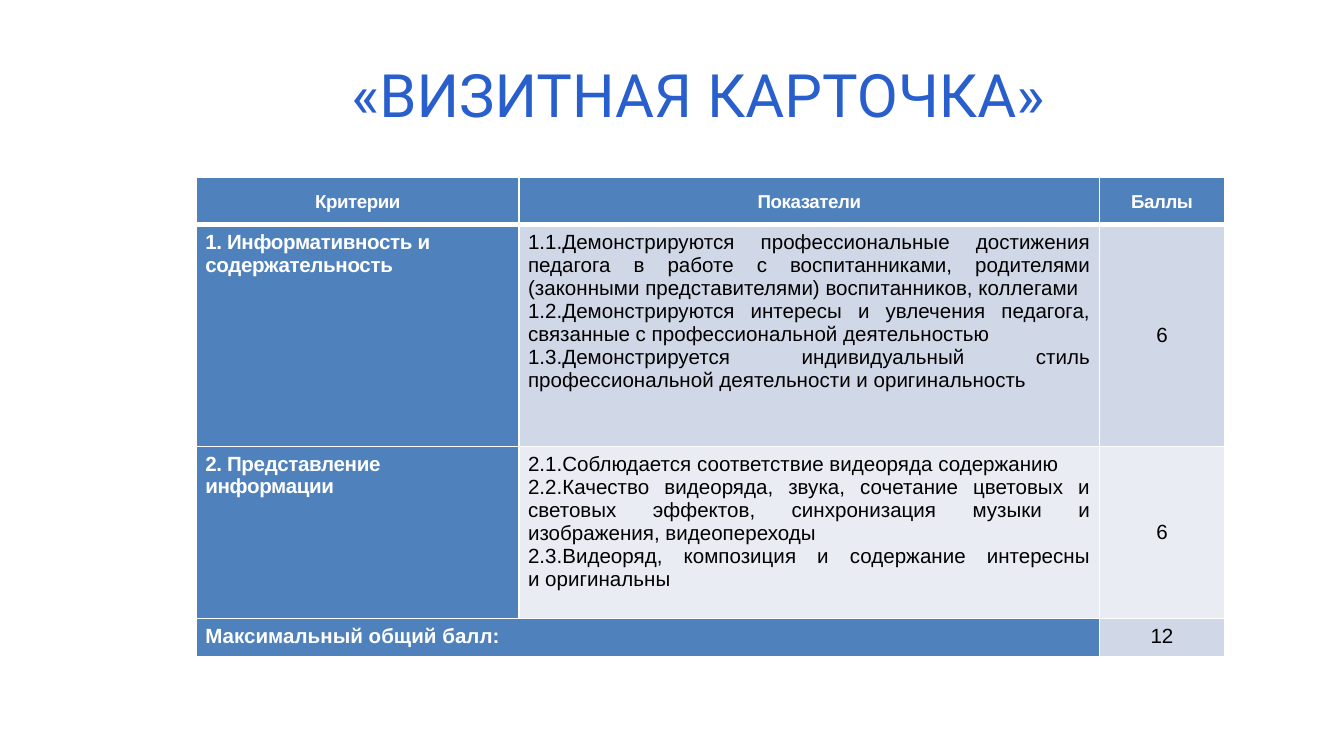
"""Build a slide with the scoring criteria for the visiting card contest."""
from lxml.etree import SubElement as Sub
from pptx import Presentation
from pptx.dml.color import RGBColor as Rgb
from pptx.enum.text import MSO_ANCHOR as Anchor, PP_ALIGN as Align
from pptx.oxml.ns import qn
from pptx.util import Cm, Pt

WHITE, BLACK, BLUE = "FFFFFF", "000000", "4F81BD"
DARK, LIGHT = "D0D8E7", "E9ECF3"
TITLE = "«ВИЗИТНАЯ КАРТОЧКА» "
HEADS = ["Критерии", "Показатели", "Баллы"]
ROWS = [
    ("1. Информативность и содержательность", [
        "1.1.Демонстрируются профессиональные достижения педагога в работе с "
        "воспитанниками, родителями (законными представителями) "
        "воспитанников, коллегами",
        "1.2.Демонстрируются интересы и увлечения педагога, связанные с "
        "профессиональной деятельностью",
        "1.3.Демонстрируется индивидуальный стиль профессиональной "
        "деятельности и оригинальность",
    ], "6", DARK, None),
    ("2. Представление информации", [
        "2.1.Соблюдается соответствие видеоряда содержанию",
        "2.2.Качество видеоряда, звука, сочетание цветовых и световых "
        "эффектов, синхронизация музыки и изображения, видеопереходы",
        "2.3.Видеоряд, композиция и содержание интересны\nи оригинальны",
    ], "6", LIGHT, 12),
]
TOTAL = ("Максимальный общий балл:", "12")
WIDTHS = [6.1, 10.97, 2.36]
HEIGHTS = [0.89, 4.19, 3.25, 0.69]


def paint(fill, hue):
    fill.solid()
    fill.fore_color.rgb = Rgb.from_string(hue)


def write(frame, texts, size=11, font="Arial", hue=BLACK, bold=False,
          align=Align.LEFT, lead=None, track=0):
    for i, text in enumerate(texts):
        par = frame.add_paragraph() if i else frame.paragraphs[0]
        par.text = text
        par.alignment = align
        if lead:
            par.line_spacing = Pt(lead)
        for run in par.runs:
            face = run.font
            face.name, face.size, face.bold = font, Pt(size), bold
            face.color.rgb = Rgb.from_string(hue)
            if track:
                run._r.get_or_add_rPr().set("spc", str(track))


def edge(cell, widths):
    props = cell._tc.get_or_add_tcPr()
    for side, width in zip("LRTB", widths):
        line = Sub(props, qn(f"a:ln{side}"), w=str(Pt(width)))
        solid = Sub(line, qn("a:solidFill"))
        Sub(solid, qn("a:srgbClr"), val=WHITE)


def put(cell, texts, fill, mid=False, **form):
    cell.margin_left = cell.margin_right = Cm(0.17)
    cell.margin_top = cell.margin_bottom = Cm(0.13)
    cell.vertical_anchor = Anchor.MIDDLE if mid else Anchor.TOP
    paint(cell.fill, fill)
    write(cell.text_frame, texts, **form)


def main():
    deck = Presentation()
    deck.slide_width, deck.slide_height = Cm(25.4), Cm(14.28)
    slide = deck.slides.add_slide(deck.slide_layouts[6])

    box = slide.shapes.add_textbox(Cm(1.27), Cm(0.58), Cm(22.86), Cm(2.39))
    frame = box.text_frame
    frame.word_wrap = True
    frame.vertical_anchor = Anchor.MIDDLE
    write(frame, [TITLE], size=32, font="Roboto", hue="295FCC",
          align=Align.CENTER)
    frame.paragraphs[0]._p.get_or_add_pPr().set("marL", str(Cm(1.27)))

    grid = slide.shapes.add_table(
        len(HEIGHTS), len(WIDTHS), Cm(3.71), Cm(3.35),
        Cm(sum(WIDTHS)), Cm(sum(HEIGHTS))).table
    for col, width in zip(grid.columns, WIDTHS):
        col.width = Cm(width)
    for row, height in zip(grid.rows, HEIGHTS):
        row.height = Cm(height)
    for r in range(len(HEIGHTS)):
        for c in range(len(WIDTHS)):
            edge(grid.cell(r, c), (0.96, 0.96, 3 if r == 1 else 0.96,
                                   3 if r == 0 else 0.96))

    bold = dict(hue=WHITE, bold=True)
    for c, head in enumerate(HEADS):
        put(grid.cell(0, c), [head], BLUE, mid=True, size=10, lead=12,
            align=Align.CENTER, track=-20, **bold)
    for r, (name, points, score, tint, lead) in enumerate(ROWS, 1):
        put(grid.cell(r, 0), [name], BLUE, lead=lead, track=-20, **bold)
        put(grid.cell(r, 1), points, tint, align=Align.JUSTIFY)
        put(grid.cell(r, 2), [score], tint, mid=True, align=Align.CENTER)

    last = len(HEIGHTS) - 1
    grid.cell(last, 0).merge(grid.cell(last, 1))
    put(grid.cell(last, 0), TOTAL[:1], BLUE, align=Align.JUSTIFY, **bold)
    put(grid.cell(last, 2), TOTAL[1:], DARK, align=Align.CENTER)
    deck.save("out.pptx")


if __name__ == "__main__":
    main()
